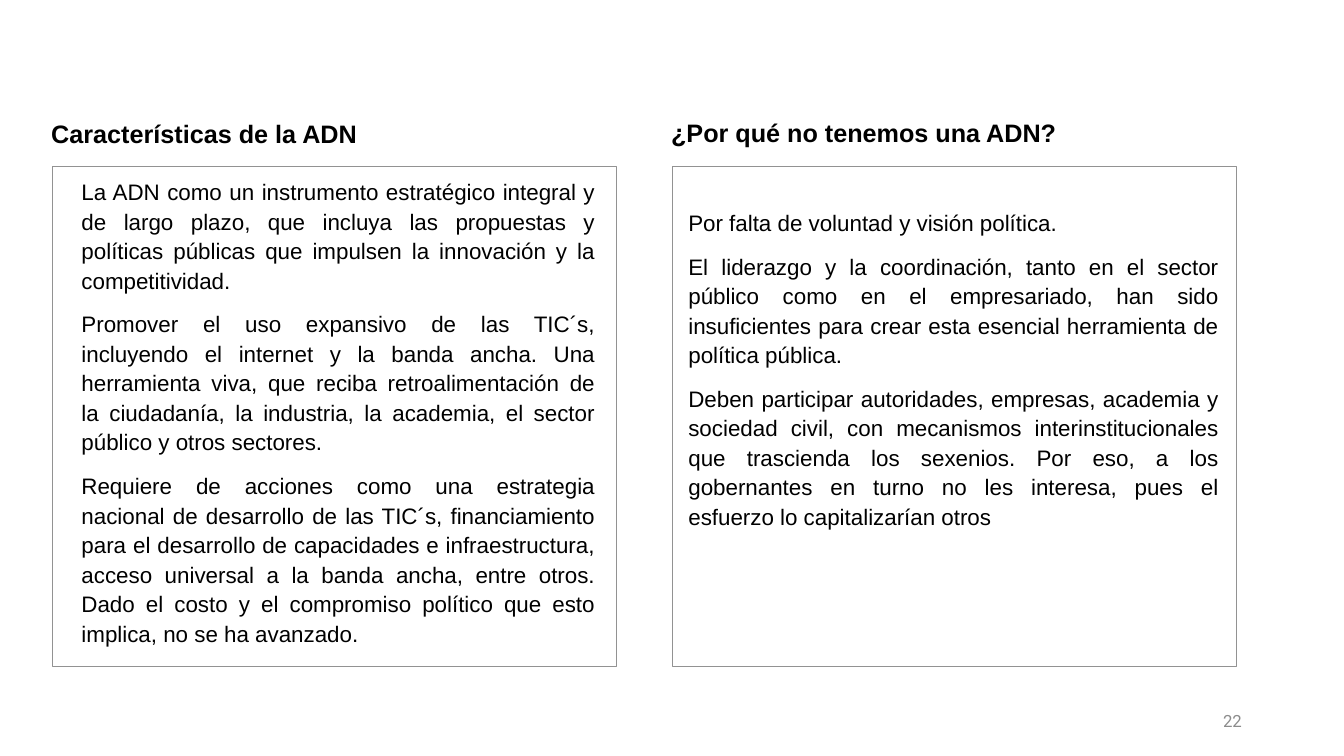
from pptx import Presentation
from pptx.dml.color import RGBColor
from pptx.enum.shapes import MSO_SHAPE
from pptx.enum.text import MSO_ANCHOR, PP_ALIGN
from pptx.util import Pt

HUES = {"ink": "000000", "edge": "929292", "page": "8C8C8C"}
LEAD = {"line_spacing": 1.1, "space_before": Pt(10)}
HEAD = {"size": Pt(18), "bold": True}
BODY = {"size": Pt(16)}

COLS = [
    {
        "head": ("Características de la ADN", 29.5, 78.5, 251),
        "body": (51.1, 122, 381, 360),
        "frame": 37.6,
        "text": [
            "La ADN como un instrumento estratégico integral y de largo plazo, "
            "que incluya las propuestas y políticas públicas que impulsen la "
            "innovación y la competitividad.",
            "Promover el uso expansivo de las TIC´s, incluyendo el internet y "
            "la banda ancha. Una herramienta viva, que reciba "
            "retroalimentación de la ciudadanía, la industria, la academia, "
            "el sector público y otros sectores.",
            "Requiere de acciones como una estrategia nacional de desarrollo "
            "de las TIC´s, financiamiento para el desarrollo de capacidades e "
            "infraestructura, acceso universal a la banda ancha, entre otros. "
            "Dado el costo y el compromiso político que esto implica, no se "
            "ha avanzado.",
        ],
    },
    {
        "head": ("¿Por qué no tenemos una ADN?", 472.3, 77.8, 296),
        "body": (484.6, 144, 393, 260),
        "frame": 480.4,
        "text": [
            "Por falta de voluntad y visión política.",
            "El liderazgo y la coordinación, tanto en el sector público como "
            "en el empresariado, han sido insuficientes para crear esta "
            "esencial herramienta de política pública.",
            "Deben participar autoridades, empresas, academia y sociedad "
            "civil, con mecanismos interinstitucionales que trascienda los "
            "sexenios. Por eso, a los gobernantes en turno no les interesa, "
            "pues el esfuerzo lo capitalizarían otros",
        ],
    },
]


def put(item, form):
    """Set each attribute of item from the dict form."""
    for key, val in form.items():
        setattr(item, key, val)


class Deck:
    """Hold the style and the current slide."""

    def __init__(self):
        """Open a blank slide of 960 by 540 points."""
        self.show = Presentation()
        put(self.show, {"slide_width": Pt(960), "slide_height": Pt(540)})
        self.slide = self.show.slides.add_slide(self.show.slide_layouts[6])

    def text(self, lines, box, font, para, face="Arial", hue="ink",
             anchor=MSO_ANCHOR.TOP):
        """Add a text box with one paragraph for each line."""
        frame = self.slide.shapes.add_textbox(*map(Pt, box)).text_frame
        put(frame, {"word_wrap": True, "vertical_anchor": anchor})
        frame.text = "\n".join(lines)
        for part in frame.paragraphs:
            put(part, para)
            run = part.runs[0]
            put(run.font, {"name": face, **font})
            run.font.color.rgb = RGBColor.from_string(HUES[hue])

    def frame(self, left):
        """Add an unfilled column frame."""
        rect = self.slide.shapes.add_shape(
            MSO_SHAPE.RECTANGLE, Pt(left), Pt(118.4), Pt(402.4), Pt(357.2))
        rect.shadow.inherit = False
        rect.fill.background()
        rect.line.width = Pt(0.25)
        rect.line.color.rgb = RGBColor.from_string(HUES["edge"])


def main():
    """Build the slide and save it."""
    deck = Deck()
    for col in COLS:
        title, left, top, width = col["head"]
        deck.text([title], (left, top, width, 52), HEAD, LEAD)
        deck.text(col["text"], col["body"], BODY,
                  {**LEAD, "alignment": PP_ALIGN.JUSTIFY})
        deck.frame(col["frame"])
    deck.text(["22"], (678.2, 500.5, 216, 28.8), {"size": Pt(12)},
              {"alignment": PP_ALIGN.RIGHT}, "Roboto", "page",
              MSO_ANCHOR.MIDDLE)
    deck.show.save("out.pptx")


if __name__ == "__main__":
    main()
